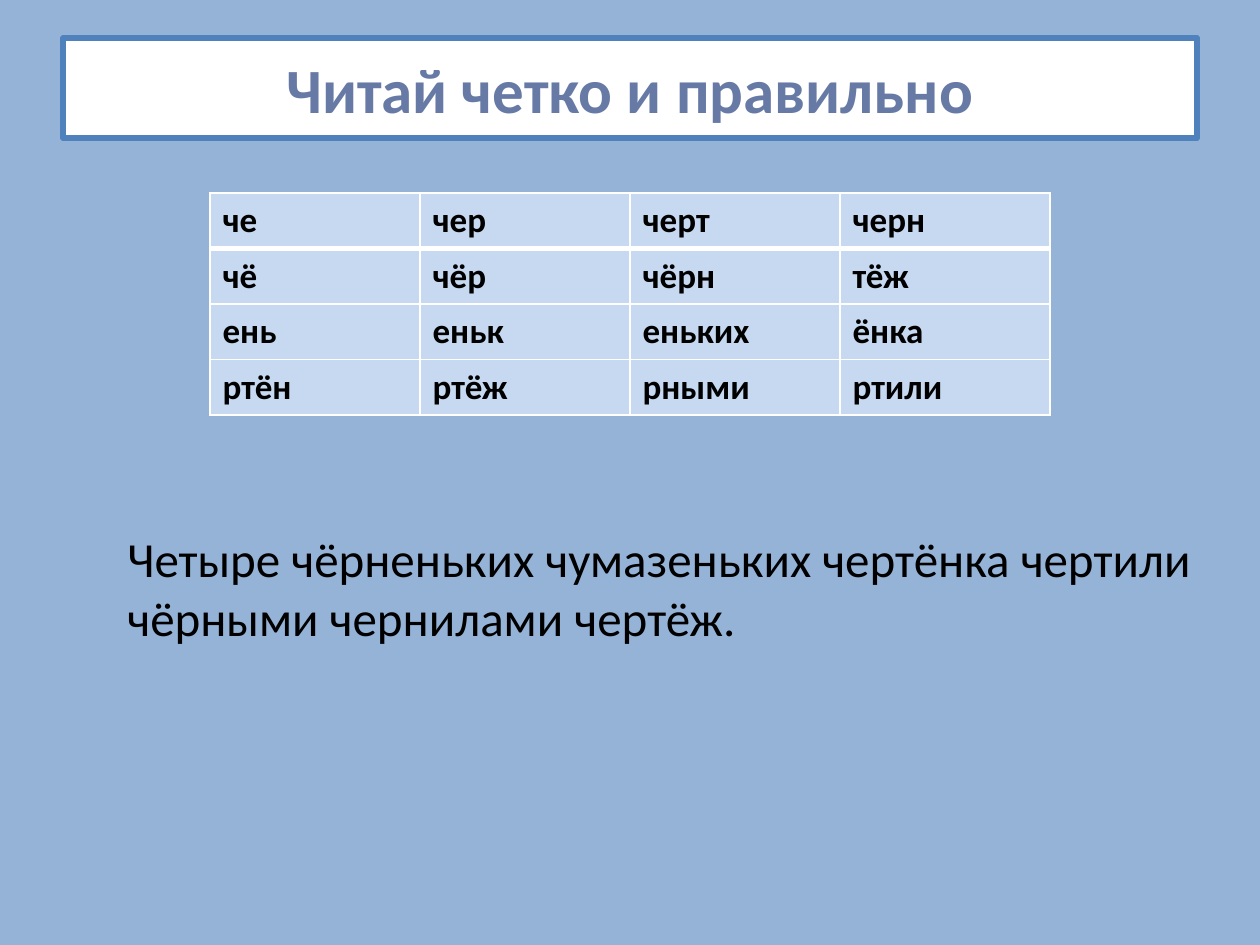
from lxml import etree
from pptx import Presentation
from pptx.dml.color import RGBColor
from pptx.enum.shapes import MSO_SHAPE
from pptx.enum.text import MSO_ANCHOR, PP_ALIGN
from pptx.oxml.ns import qn
from pptx.util import Pt

# Content
TITLE = "Читай четко и правильно"
SYLLABLES = [
    ["че", "чер", "черт", "черн"],
    ["чё", "чёр", "чёрн", "тёж"],
    ["ень", "еньк", "еньких", "ёнка"],
    ["ртён", "ртёж", "рными", "ртили"],
]
TWISTER = "Четыре чёрненьких чумазеньких чертёнка чертили чёрными чернилами чертёж."

# Layout in px, 126 to the inch
PX = 914400 // 126
SLIDE = (1260, 945)
TITLE_BOX = (63, 38, 1134, 100)
TABLE_LEFT, TABLE_TOP, COLUMN, ROW = 210, 193, 210, 55
TWISTER_BOX = (115, 522, 1088, 132)


def px(*lengths):
    return [length * PX for length in lengths]


def color(value):
    return RGBColor.from_string(value)


def write(frame, text, size, ink, bold=False, align=PP_ALIGN.LEFT):
    paragraph = frame.paragraphs[0]
    paragraph.alignment = align
    run = paragraph.add_run()
    run.text = text
    run.font.name = "Calibri"
    run.font.size = Pt(size)
    run.font.bold = bold
    run.font.color.rgb = color(ink)


def add_borders(cell, widths):
    """Draw white borders; widths are in points for left, right, top, bottom."""
    properties = cell._tc.get_or_add_tcPr()
    for index, (side, width) in enumerate(zip("LRTB", widths)):
        line = etree.Element(qn(f"a:ln{side}"), w=str(Pt(width)))
        fill = etree.SubElement(line, qn("a:solidFill"))
        etree.SubElement(fill, qn("a:srgbClr"), val="FFFFFF")
        properties.insert(index, line)


presentation = Presentation()
presentation.slide_width, presentation.slide_height = px(*SLIDE)
slide = presentation.slides.add_slide(presentation.slide_layouts[6])
slide.background.fill.solid()
slide.background.fill.fore_color.rgb = color("95B3D7")

# Title panel
title = slide.shapes.add_shape(MSO_SHAPE.RECTANGLE, *px(*TITLE_BOX))
title.shadow.inherit = False
title.fill.solid()
title.fill.fore_color.rgb = color("FFFFFF")
title.line.color.rgb = color("4F81BD")
title.line.width = Pt(3.15)
title.text_frame.word_wrap = True
title.text_frame.vertical_anchor = MSO_ANCHOR.MIDDLE
write(title.text_frame, TITLE, 36, "677AA5", True, PP_ALIGN.CENTER)

# Syllable table
row_count, column_count = len(SYLLABLES), len(SYLLABLES[0])
syllables = slide.shapes.add_table(
    row_count, column_count,
    *px(TABLE_LEFT, TABLE_TOP, COLUMN * column_count, ROW * row_count),
).table
for r, row in enumerate(SYLLABLES):
    for c, syllable in enumerate(row):
        cell = syllables.cell(r, c)
        cell.fill.solid()
        cell.fill.fore_color.rgb = color("C6D9F1")
        # A thicker rule separates the first row from the rest
        add_borders(cell, (1, 1, 3 if r == 1 else 1, 3 if r == 0 else 1))
        write(cell.text_frame, syllable, 20, "000000", True)

# Tongue twister
twister = slide.shapes.add_textbox(*px(*TWISTER_BOX))
twister.text_frame.word_wrap = True
write(twister.text_frame, TWISTER, 28, "000000", align=PP_ALIGN.JUSTIFY)

presentation.save("out.pptx")
